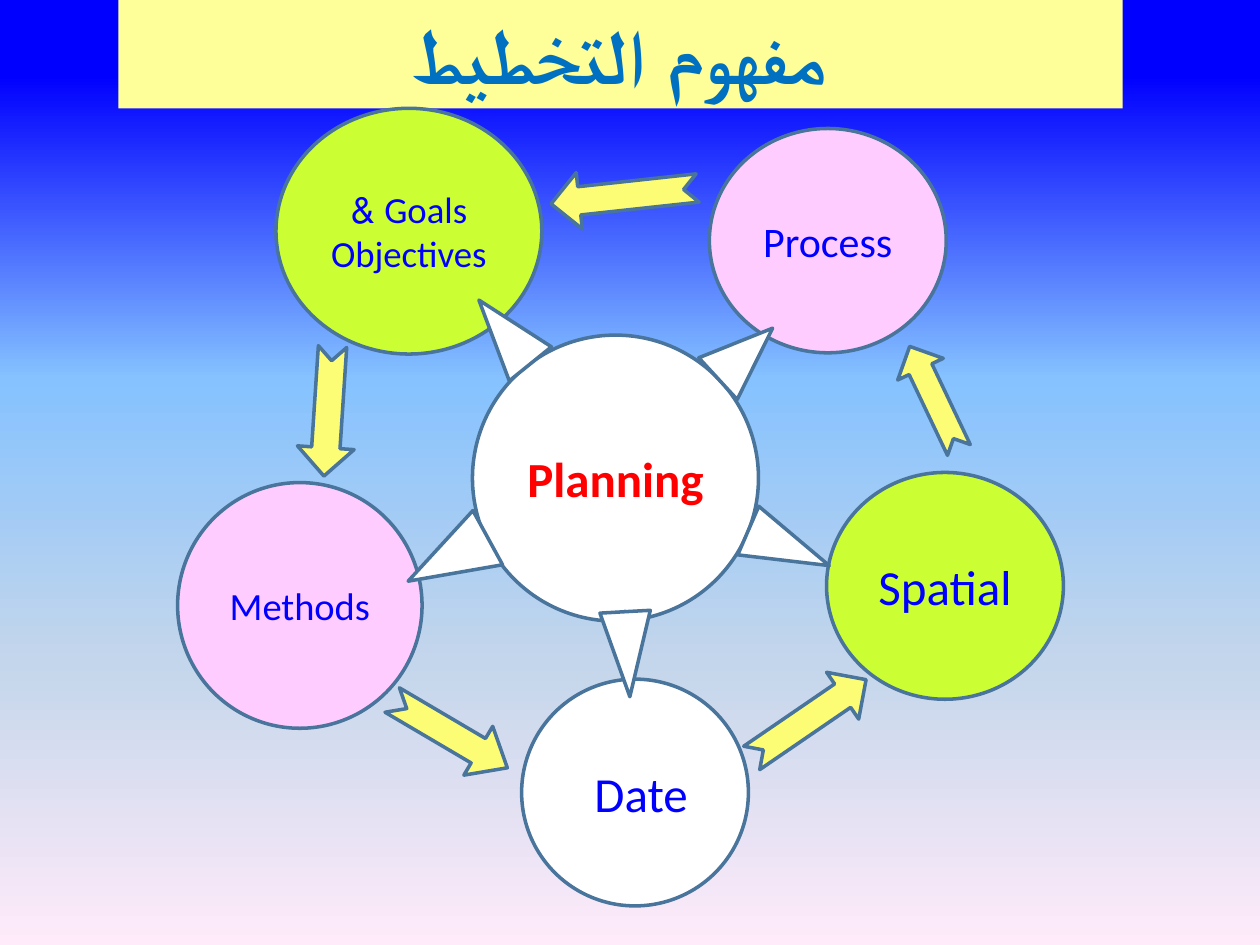
from dataclasses import dataclass

from lxml import etree
from pptx import Presentation
from pptx.dml.color import RGBColor
from pptx.enum import shapes, text
from pptx.oxml import ns
from pptx.util import Inches, Pt

WHITE = RGBColor(0xFF, 0xFF, 0xFF)
LIME = RGBColor(0xCC, 0xFF, 0x33)
PINK = RGBColor(0xFF, 0xCC, 0xFF)
YELLOW = RGBColor(0xFD, 0xFD, 0x75)
BANNER = RGBColor(0xFF, 0xFF, 0x99)
OUTLINE = RGBColor(0x49, 0x74, 0x9B)
BLUE = RGBColor(0x00, 0x00, 0xFF)
RED = RGBColor(0xFF, 0x00, 0x00)
TITLE_BLUE = RGBColor(0x00, 0x70, 0xC0)
SKY = [
    (8, BLUE),
    (40, RGBColor(0x85, 0xC2, 0xFF)),
    (70, RGBColor(0xC4, 0xD6, 0xEB)),
    (100, RGBColor(0xFF, 0xEB, 0xFA)),
]
FONT = "Calibri"


@dataclass
class Box:
    left: float
    top: float
    width: float
    height: float

    def inches(self):
        return [Inches(v) for v in (self.left, self.top, self.width, self.height)]


@dataclass
class Circle:
    label: str
    box: Box
    fill: RGBColor
    size: int
    color: RGBColor = BLUE
    bold: bool = False


@dataclass
class Arrow:
    box: Box
    rotation: float
    adjustments: tuple = (0.5, 0.5)


CIRCLES = [
    Circle("Planning", Box(3.75, 2.66, 2.27, 2.27), WHITE, 28, RED, True),
    Circle("Spatial", Box(6.56, 3.75, 1.88, 1.8), LIME, 28),
    Circle("Date ", Box(4.14, 5.39, 1.8, 1.8), WHITE, 28),
    Circle("Methods", Box(1.41, 3.83, 1.94, 1.95), PINK, 22),
    Circle("Goals &\nObjectives", Box(2.19, 0.86, 2.11, 1.95), LIME, 21),
    Circle("Process", Box(5.63, 1.02, 1.88, 1.78), PINK, 24),
]

# Pointers from the centre to each circle
POINTERS = [
    Arrow(Box(5.69, 2.51, 0.45, 0.59), 227.3, (0.268, 1.647)),
    Arrow(Box(3.79, 2.31, 0.43, 0.65), 141.1, (0.204, 1.947)),
    Arrow(Box(3.31, 4.08, 0.49, 0.72), 61.3, (0.067, 1.863)),
    Arrow(Box(6.05, 4, 0.42, 0.7), 293.4, (0.5, 2.189)),
    Arrow(Box(4.78, 4.85, 0.4, 0.68), 356.8, (0, 1.688)),
]

# Arrows leading around the ring
RING_ARROWS = [
    Arrow(Box(4.37, 1.33, 1.17, 0.45), 173.8),
    Arrow(Box(6.96, 2.96, 0.91, 0.4), 244.6),
    Arrow(Box(5.87, 5.48, 1.1, 0.45), 325.6),
    Arrow(Box(3.04, 5.6, 1.06, 0.45), 30.5, (0.5, 0.594)),
    Arrow(Box(2.09, 3.04, 1.03, 0.45), 93.8),
]


def paint_background(slide) -> None:
    fill = slide.background.fill
    fill.gradient()
    fill.gradient_angle = 270
    stops = slide.element.find(".//" + ns.qn("a:gsLst"))
    for default_stop in list(stops):
        stops.remove(default_stop)
    for percent, color in SKY:
        stop = etree.SubElement(stops, ns.qn("a:gs"), pos=str(percent * 1000))
        etree.SubElement(stop, ns.qn("a:srgbClr"), val=str(color))


def write(shape, label: str, size: int, color: RGBColor, bold: bool) -> None:
    frame = shape.text_frame
    frame.text = label
    frame.word_wrap = True
    frame.auto_size = text.MSO_AUTO_SIZE.NONE
    frame.vertical_anchor = text.MSO_ANCHOR.MIDDLE
    for paragraph in frame.paragraphs:
        paragraph.alignment = text.PP_ALIGN.CENTER
        paragraph._p.get_or_add_pPr().set("rtl", "1")
        font = paragraph.font
        font.name, font.size, font.bold = FONT, Pt(size), bold
        font.color.rgb = color


def draw_shape(slide, kind, box: Box, fill: RGBColor):
    shape = slide.shapes.add_shape(kind, *box.inches())
    shape.shadow.inherit = False
    shape.fill.solid()
    shape.fill.fore_color.rgb = fill
    shape.line.color.rgb = OUTLINE
    shape.line.width = Pt(2)
    return shape


def draw_circle(slide, circle: Circle) -> None:
    shape = draw_shape(slide, shapes.MSO_SHAPE.OVAL, circle.box, circle.fill)
    write(shape, circle.label, circle.size, circle.color, circle.bold)


def draw_arrow(slide, kind, arrow: Arrow, fill: RGBColor) -> None:
    shape = draw_shape(slide, kind, arrow.box, fill)
    shape.rotation = arrow.rotation
    for index, value in enumerate(arrow.adjustments):
        shape.adjustments[index] = value


def main() -> None:
    deck = Presentation()
    deck.slide_width, deck.slide_height = Inches(10), Inches(7.5)
    slide = deck.slides.add_slide(deck.slide_layouts[5])
    paint_background(slide)

    # Title banner
    title = slide.shapes.title
    title.left, title.top, title.width, title.height = Box(0.94, 0, 7.97, 0.86).inches()
    title.fill.solid()
    title.fill.fore_color.rgb = BANNER
    write(title, "مفهوم التخطيط", 44, TITLE_BLUE, True)

    # Planning cycle
    for circle in CIRCLES:
        draw_circle(slide, circle)
    for pointer in POINTERS:
        draw_arrow(slide, shapes.MSO_SHAPE.DOWN_ARROW, pointer, WHITE)
    for arrow in RING_ARROWS:
        draw_arrow(slide, shapes.MSO_SHAPE.NOTCHED_RIGHT_ARROW, arrow, YELLOW)

    deck.save("out.pptx")


if __name__ == "__main__":
    main()
